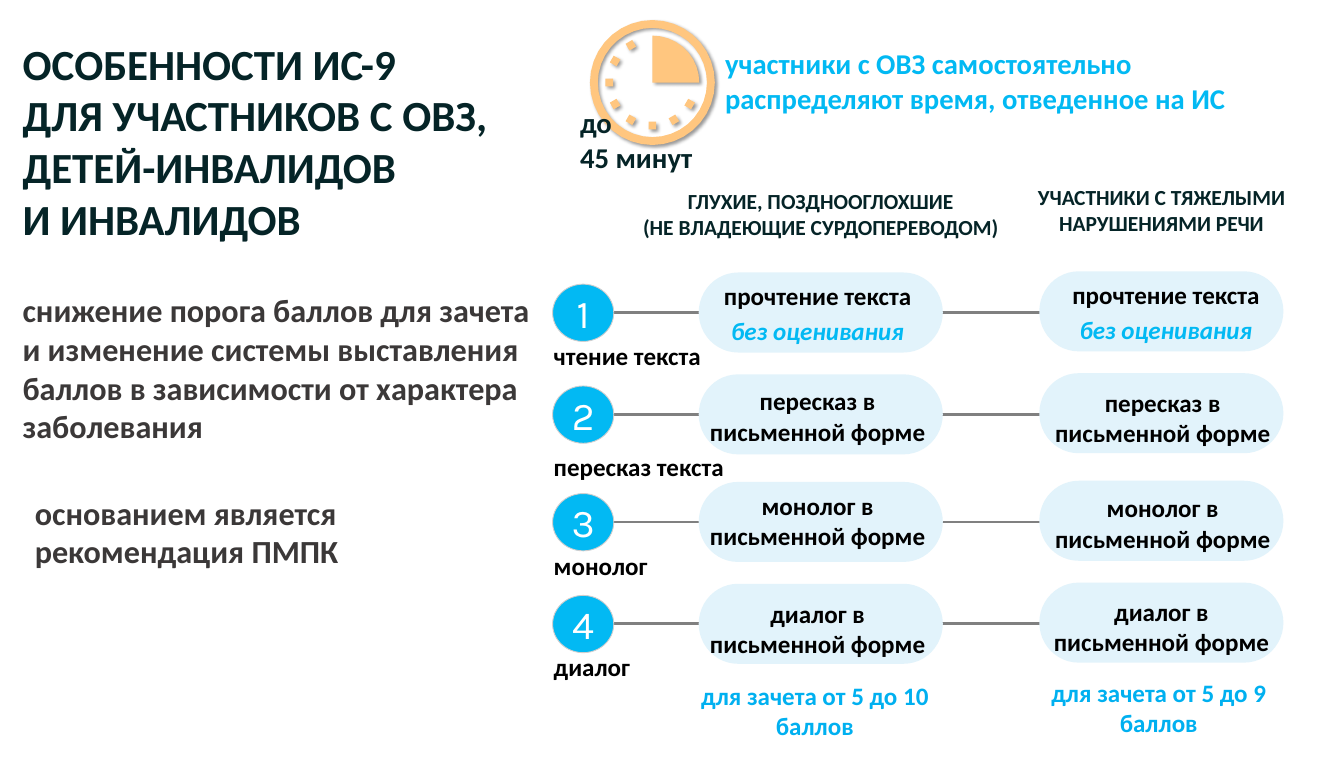
from dataclasses import dataclass
from math import cos, radians, sin

from lxml.etree import SubElement
from pptx import Presentation
from pptx.dml.color import RGBColor as Rgb
from pptx.enum.shapes import MSO_CONNECTOR as Link, MSO_SHAPE as Kind
from pptx.enum.text import MSO_ANCHOR as Anchor, MSO_AUTO_SIZE as Fit, PP_ALIGN as Align
from pptx.oxml.ns import qn
from pptx.util import Pt


@dataclass(frozen=True)
class Theme:
    ink: Rgb = Rgb(0x05, 0x24, 0x27)
    gray: Rgb = Rgb(0x3B, 0x38, 0x38)
    black: Rgb = Rgb(0, 0, 0)
    white: Rgb = Rgb(255, 255, 255)
    cyan: Rgb = Rgb(0x02, 0xB9, 0xF3)
    blue: Rgb = Rgb(0x00, 0xB0, 0xF0)
    pale: Rgb = Rgb(0xE2, 0xF3, 0xFB)
    amber: Rgb = Rgb(0xFF, 0xC6, 0x7F)
    rule: Rgb = Rgb(0x80, 0x80, 0x80)
    rim: Rgb = Rgb(0xD0, 0xCE, 0xCE)
    title: int = 48
    digit: int = 44
    body: int = 36
    note: int = 32
    cell: int = 28
    head: int = 24
    face: str = "Calibri"
    round: str = "Karla"


theme = Theme()
deck = Presentation()
deck.slide_width, deck.slide_height = Pt(1502.64), Pt(850.32)
slide = deck.slides.add_slide(deck.slide_layouts[3])
shapes = slide.shapes


def write(text, box, size, color, align=Align.LEFT, shape=None):
    """Fill the given shape, or a new text box, and place it at box."""
    shape = shape or shapes.add_textbox(0, 0, 0, 0)
    shape.left, shape.top, shape.width, shape.height = map(Pt, box)
    frame = shape.text_frame
    frame.text = text
    frame.word_wrap, frame.auto_size = True, Fit.NONE
    frame.vertical_anchor = Anchor.TOP
    for para in frame.paragraphs:
        para.alignment = align
        if shape.is_placeholder:
            para.space_before = Pt(0)
            props = para._p.get_or_add_pPr()
            props.set("marL", "0")
            props.set("indent", "0")
            SubElement(props, qn("a:buNone"))
        font = para.font
        font.name, font.size, font.bold = theme.face, Pt(size), True
        font.color.rgb = color
    return shape


def paint(shape, color):
    """Give a shape a flat fill with no line and no shadow."""
    shape.shadow.inherit = False
    shape.fill.solid()
    shape.fill.fore_color.rgb = color
    shape.line.fill.background()
    return shape


# Left side
title, goal, basis = slide.placeholders
write("ОСОБЕННОСТИ ИС-9\nДЛЯ УЧАСТНИКОВ С ОВЗ, ДЕТЕЙ-ИНВАЛИДОВ\nИ ИНВАЛИДОВ",
      (18, 38.2, 661.7, 240), theme.title, theme.ink, shape=title)
write("снижение порога баллов для зачета\n"
      "и изменение системы выставления баллов в зависимости от характера заболевания",
      (18, 321.1, 585.4, 181.4), theme.body, theme.gray, shape=goal)
write("основанием является рекомендация ПМПК",
      (31.7, 547.2, 404, 94.3), theme.body, theme.gray, shape=basis)

# Headings and pass marks
write("ГЛУХИЕ, ПОЗДНООГЛОХШИЕ\n(НЕ ВЛАДЕЮЩИЕ СУРДОПЕРЕВОДОМ)",
      (707, 206.6, 421.2, 65.5), theme.head, theme.ink, Align.CENTER)
write("УЧАСТНИКИ С ТЯЖЕЛЫМИ НАРУШЕНИЯМИ РЕЧИ",
      (1147, 202.3, 303.1, 65.5), theme.head, theme.ink, Align.CENTER)
write("участники с ОВЗ самостоятельно\nраспределяют время, отведенное на ИС",
      (803.5, 48.2, 589.7, 85), theme.note, theme.cyan)
for mark, left, top in (("10", 740, 756.7), ("9", 1124.5, 753.8)):
    write(f"для зачета от 5 до {mark}\nбаллов", (left, top, 342, 75),
          theme.cell, theme.blue, Align.CENTER)

# Tasks: name, form, row centre, name top, text tops and second text left
tasks = [
    ("чтение текста", "прочтение текста\nбез оценивания", 349.2, 377.3, 310.3, 308.9, 1175),
    ("пересказ текста", "пересказ в письменной форме", 463, 501.1, 427.7, 429.8, 1171.4),
    ("монолог", "монолог в письменной форме", 583.2, 611.3, 544.3, 547.2, 1171.4),
    ("диалог", "диалог в письменной форме", 697, 724.3, 664.6, 662.4, 1170),
]
for num, (name, form, mid, low, first, second, left) in enumerate(tasks, 1):
    for start, end in ((684.7, 806.4), (1041.1, 1162.8)):
        link = shapes.add_connector(Link.STRAIGHT, Pt(start), Pt(mid), Pt(end), Pt(mid))
        link.line.color.rgb, link.line.width = theme.rule, Pt(3)
        SubElement(link._element.spPr, qn("a:effectLst"))

    dot = paint(shapes.add_shape(Kind.FLOWCHART_CONNECTOR, 0, 0, 0, 0), theme.cyan)
    dot.line.color.rgb, dot.line.width = theme.rim, Pt(1)
    write(str(num), (617.8, mid - 31.7, 68.4, 64), theme.digit, theme.white, Align.CENTER, dot)
    dot.text_frame.vertical_anchor = Anchor.MIDDLE
    font = dot.text_frame.paragraphs[0].font
    font.name, font.bold = theme.round, False

    write(name, (612, low, 210.2, 41), theme.cell, theme.black)
    for edge, rise, x, y in ((781.2, 0, 785.5, first), (1162, 1.3, left, second)):
        paint(shapes.add_shape(Kind.FLOWCHART_TERMINATOR, Pt(edge), Pt(mid - rise - 44.7),
                               Pt(272.9), Pt(89.4)), theme.pale)
        cell = write(form, (x, y, 257, 75), theme.cell, theme.black, Align.CENTER)
        if num == 1:
            note = cell.text_frame.paragraphs[1]
            note.space_before = Pt(4.8)
            note.font.italic, note.font.color.rgb = True, theme.cyan

# Clock: outlines as (radius, angle)
rings = [[(size, a) for a in range(0, 360, 10)] for size in (69.8, 61)]
wedge = [(0, 0)] + [(52.4, a) for a in range(-90, 1, 10)]
ticks = [[(44, a - 5.6), (52.6, a - 4.7), (52.6, a + 4.7), (44, a + 5.6)]
         for a in range(30, 241, 30)]
pen = shapes.build_freeform(Pt(729.4), Pt(92.2), scale=1.0)
for loop in (*rings, wedge, *ticks):
    spots = [(Pt(729.4 + r * cos(radians(a))), Pt(92.2 + r * sin(radians(a)))) for r, a in loop]
    pen.move_to(*spots[0])
    pen.add_line_segments(spots[1:], close=True)
clock = paint(pen.convert_to_shape(), theme.amber)
glow = SubElement(clock._element.spPr.find(qn("a:effectLst")), qn("a:outerShdw"),
                  blurRad=str(Pt(4)), dist=str(Pt(3)), dir="2700000", algn="tl", rotWithShape="0")
tint = SubElement(glow, qn("a:srgbClr"), val="000000")
SubElement(tint, qn("a:alpha"), val="40000")
write("до\n45 минут", (641.5, 113.8, 180.7, 85), theme.note, theme.ink)

deck.save("out.pptx")
